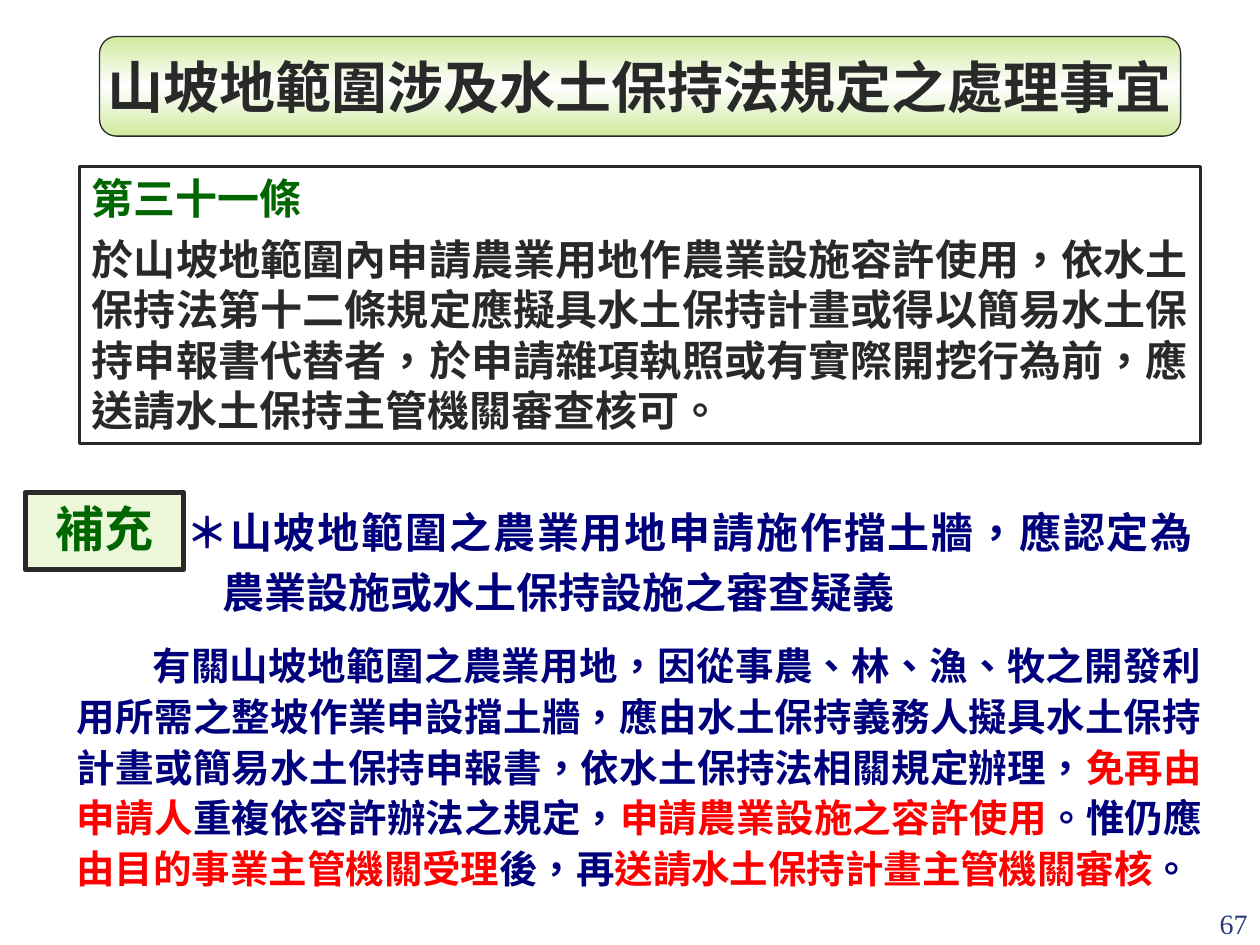
import copy

import pptx
import pptx.dml.color
import pptx.enum.lang
import pptx.enum.shapes
import pptx.enum.text
import pptx.util

Inches = pptx.util.Inches
Pt = pptx.util.Pt
RGBColor = pptx.dml.color.RGBColor
Align = pptx.enum.text.PP_ALIGN
Anchor = pptx.enum.text.MSO_ANCHOR
AutoSize = pptx.enum.text.MSO_AUTO_SIZE
Shape = pptx.enum.shapes.MSO_SHAPE

INK = RGBColor(0x29, 0x29, 0x29)
GREEN = RGBColor(0x00, 0x66, 0x00)
NAVY = RGBColor(0x00, 0x00, 0x7D)
RED = RGBColor(0xFF, 0x00, 0x00)
BLUE = RGBColor(0x2A, 0x3D, 0x7A)
LIME = RGBColor(0xCF, 0xEA, 0x9E)
PALE = RGBColor(0xEC, 0xF7, 0xD9)
WHITE = RGBColor(0xFF, 0xFF, 0xFF)


class SlideBuilder:
    font = "Times New Roman"
    language = pptx.enum.lang.MSO_LANGUAGE_ID.TRADITIONAL_CHINESE

    def __init__(self, prs):
        self.slide = prs.slides.add_slide(prs.slide_layouts[6])

    def shape(self, kind, box, line_width, fill=None):
        sp = self.slide.shapes.add_shape(kind, *map(Inches, box))
        sp.shadow.inherit = False
        sp.line.color.rgb = INK
        sp.line.width = Pt(line_width)
        if fill is None:
            sp.fill.background()
        else:
            sp.fill.solid()
            sp.fill.fore_color.rgb = fill
        return self.frame(sp, Anchor.TOP)

    def banner(self, box):
        sp = self.shape(Shape.ROUNDED_RECTANGLE, box, 0.75)
        sp.text_frame.auto_size = AutoSize.NONE
        sp.text_frame.word_wrap = False
        sp.text_frame.vertical_anchor = Anchor.MIDDLE
        sp.fill.gradient()
        sp.fill.gradient_angle = 90
        first = sp.fill.gradient_stops[0]._gs
        first.addnext(copy.deepcopy(first))
        for stop, position, color in zip(sp.fill.gradient_stops, (0, 0.5, 1), (LIME, WHITE, LIME)):
            stop.position = position
            stop.color.rgb = color
        return sp

    def text_box(self, box):
        return self.frame(self.slide.shapes.add_textbox(*map(Inches, box)), Anchor.TOP)

    def frame(self, sp, anchor):
        tf = sp.text_frame
        tf.word_wrap = True
        tf.auto_size = AutoSize.SHAPE_TO_FIT_TEXT
        tf.vertical_anchor = anchor
        return sp

    def paragraph(self, sp, runs, size, align=Align.JUSTIFY, bold=True, font=None, spacing=None):
        tf = sp.text_frame
        p = tf.paragraphs[0]
        if p.runs:
            p = tf.add_paragraph()
            p.space_before = Pt(6)
        p.alignment = align
        if spacing:
            p.line_spacing = spacing
        p.font.name = font or self.font
        p.font.size = Pt(size)
        p.font.bold = bold
        if len(runs) == 1:
            p.font.color.rgb = runs[0][1]
        for text, color in runs:
            r = p.add_run()
            r.text = text
            r.font.language_id = self.language
            if len(runs) > 1:
                r.font.color.rgb = color
        return p

    def indent(self, p, left, first):
        pPr = p._p.get_or_add_pPr()
        pPr.set("marL", str(Inches(left)))
        pPr.set("indent", str(Inches(first)))


def main():
    prs = pptx.Presentation()
    prs.slide_width = Inches(10)
    prs.slide_height = Inches(7.5)
    s = SlideBuilder(prs)

    title = s.banner((0.79, 0.29, 8.58, 0.79))
    s.paragraph(title, [("山坡地範圍涉及水土保持法規定之處理事宜", INK)], 32, Align.CENTER)

    article = s.shape(Shape.RECTANGLE, (0.63, 1.32, 8.9, 2.2), 1.5)
    s.paragraph(article, [("第三十一條", GREEN)], 24)
    s.paragraph(article, [(
        "於山坡地範圍內申請農業用地作農業設施容許使用，依水土保持法第十二條規定"
        "應擬具水土保持計畫或得以簡易水土保持申報書代替者，於申請雜項執照或有實際"
        "開挖行為前，應送請水土保持主管機關審查核可。", INK)], 24)

    question = s.text_box((1.38, 3.89, 8.19, 1.06))
    p = s.paragraph(question, [(
        "＊山坡地範圍之農業用地申請施作擋土牆，應認定為農業設施或水土保持設施之審查疑義",
        NAVY)], 24, spacing=1.2)
    s.indent(p, 0.29, -0.29)

    answer = s.text_box((0.51, 5.01, 9.13, 2.14))
    p = s.paragraph(answer, [
        ("有關山坡地範圍之農業用地，因從事農、林、漁、牧之開發利用所需之整坡作業"
         "申設擋土牆，應由水土保持義務人擬具水土保持計畫或簡易水土保持申報書，"
         "依水土保持法相關規定辦理，", NAVY),
        ("免再由申請人", RED),
        ("重複依容許辦法之規定，", NAVY),
        ("申請農業設施之容許使用", RED),
        ("。惟仍應", NAVY),
        ("由目的事業主管機關受理", RED),
        ("後，再", NAVY),
        ("送請水土保持計畫主管機關審核", RED),
        ("。", NAVY),
    ], 22, spacing=1.1)
    s.indent(p, 0, 0.6)

    label = s.shape(Shape.RECTANGLE, (0.2, 3.91, 1.26, 0.61), 3, PALE)
    s.paragraph(label, [("補充", GREEN)], 28, Align.CENTER, font="Noto Sans CJK SC")

    number = s.text_box((9, 7.01, 1, 0.5))
    number.text_frame.auto_size = AutoSize.NONE
    number.text_frame.vertical_anchor = Anchor.BOTTOM
    s.paragraph(number, [("67", BLUE)], 16, Align.RIGHT, bold=False)

    prs.save("out.pptx")


if __name__ == "__main__":
    main()
